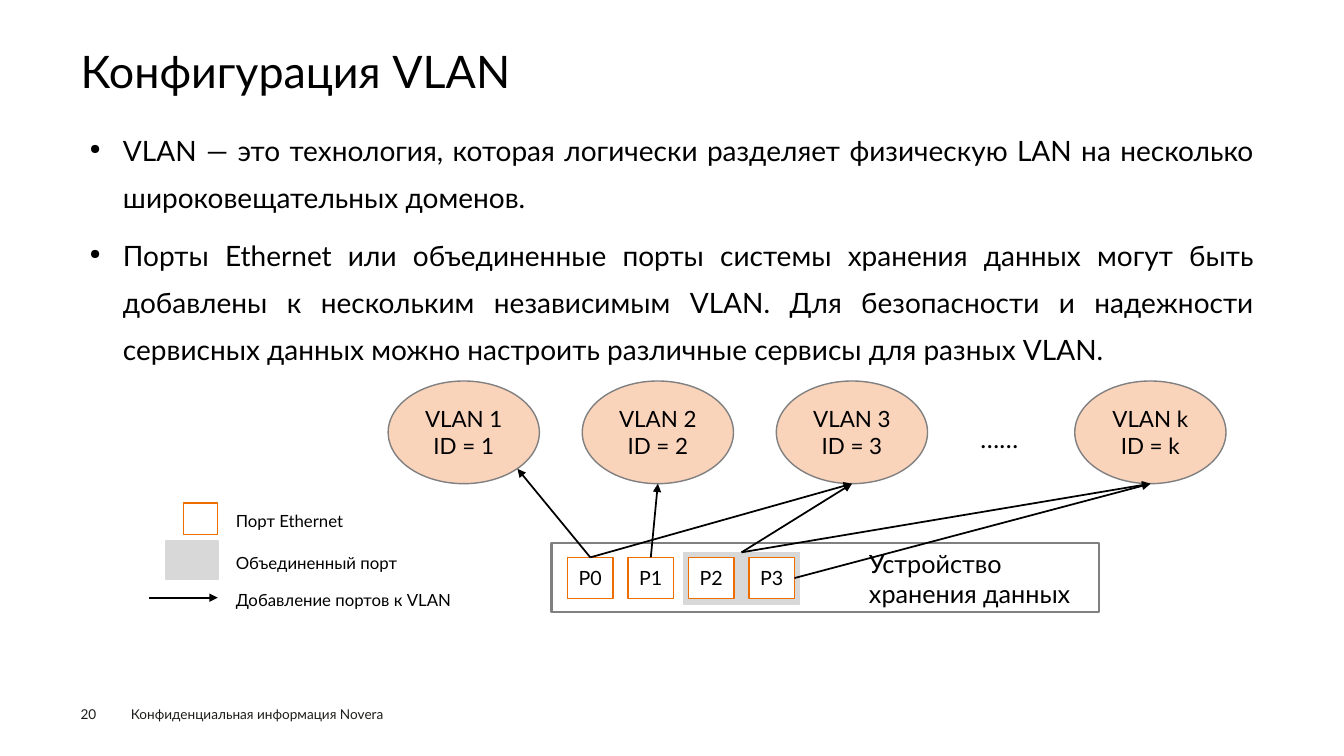
from lxml import etree
from pptx import Presentation
from pptx import util as u
from pptx.dml.color import RGBColor
from pptx.enum import shapes, text
from pptx.oxml.ns import qn

BLACK = RGBColor(0x00, 0x00, 0x00)
INK = RGBColor(0x1D, 0x1D, 0x1B)
WHITE = RGBColor(0xFF, 0xFF, 0xFF)
GREY = RGBColor(0x80, 0x80, 0x80)
SILVER = RGBColor(0xD8, 0xD8, 0xD8)
PEACH = RGBColor(0xFA, 0xD3, 0xBB)
ORANGE = RGBColor(0xED, 0x6D, 0x00)

FONT = "Lato"
WIDTH, HEIGHT = 13.33, 7.5
LEFT, CONTENT_WIDTH = 0.06 * WIDTH, 0.88 * WIDTH
RECT, OVAL = shapes.MSO_SHAPE.RECTANGLE, shapes.MSO_SHAPE.OVAL
MIDDLE, TOP = text.MSO_ANCHOR.MIDDLE, text.MSO_ANCHOR.TOP
CENTER, JUSTIFY = text.PP_ALIGN.CENTER, text.PP_ALIGN.JUSTIFY


def inches(*lengths):
    return [u.Inches(length) for length in lengths]


def add_bullet(paragraph, indent):
    properties = paragraph._p.get_or_add_pPr()
    properties.set("marL", str(u.Inches(indent)))
    properties.set("indent", str(-u.Inches(indent)))
    etree.SubElement(properties, qn("a:buSzPct"), val="50000")
    etree.SubElement(properties, qn("a:buChar"), char="●")


def write(shape, paragraphs, size=12, color=BLACK, align=None, anchor=TOP,
          inset=(0.1, 0.05), spacing=None, before=0, bullet_indent=None):
    frame = shape.text_frame
    frame.word_wrap = True
    frame.vertical_anchor = anchor
    frame.margin_left = frame.margin_right = u.Inches(inset[0])
    frame.margin_top = frame.margin_bottom = u.Inches(inset[1])
    for index, words in enumerate(paragraphs):
        paragraph = frame.add_paragraph() if index else frame.paragraphs[0]
        if bullet_indent:
            add_bullet(paragraph, bullet_indent)
        paragraph.alignment = align
        paragraph.line_spacing = spacing
        paragraph.space_before = u.Pt(before if index else 0)
        run = paragraph.add_run()
        run.text = words
        run.font.name, run.font.size = FONT, u.Pt(size)
        run.font.color.rgb = color


def add_label(slide, box, *paragraphs, **style):
    write(slide.shapes.add_textbox(*inches(*box)), paragraphs, **style)


def add_block(slide, kind, box, fill, line, line_width=1, paragraphs=(), size=14):
    block = slide.shapes.add_shape(kind, *inches(*box))
    block.shadow.inherit = False
    block.fill.solid()
    block.fill.fore_color.rgb = fill
    block.line.color.rgb = line
    block.line.width = u.Pt(line_width)
    write(block, paragraphs, size=size, align=CENTER, anchor=MIDDLE, inset=(0, 0))


def add_arrow(slide, start, end):
    arrow = slide.shapes.add_connector(
        shapes.MSO_CONNECTOR.STRAIGHT, *inches(*start, *end))
    arrow.line.color.rgb = BLACK
    arrow.line.width = u.Pt(1.25)
    etree.SubElement(arrow.line._get_or_add_ln(), qn("a:tailEnd"), type="triangle")
    etree.SubElement(arrow._element.spPr, qn("a:effectLst"))


def add_heading(slide, box, words):
    title = slide.shapes.title
    title.left, title.top, title.width, title.height = inches(*box)
    write(title, [words], size=32, align=text.PP_ALIGN.LEFT, inset=(0, 0), spacing=0.9)


def add_vlans(slide, box):
    """Draw the row of VLANs and return their centres and radii."""
    left, top, width, height = box
    oval_width, pitch = 1.5, 1.925
    lefts = {name: left + column * pitch for column, name in enumerate("123")}
    lefts["k"] = left + width - oval_width
    for name, x in lefts.items():
        add_block(slide, OVAL, (x, top, oval_width, height), PEACH, GREY,
                  paragraphs=[f"VLAN {name}", f"ID = {name}"], size=16)
    add_label(slide, (left + 3 * pitch, top + 0.37, 0.7, 0.34), "……", size=18)
    return {name: (x + oval_width / 2, top + height / 2, oval_width / 2, height / 2)
            for name, x in lefts.items()}


def add_device(slide, box):
    """Draw the storage device and return the points where arrows leave it."""
    left, top, width, height = box
    port_width, port_height, pitch, edge = 0.45, 0.41, 0.6, 0.05
    first_port, port_top = left + 0.16, top + 0.14
    add_block(slide, RECT, box, WHITE, GREY, 1.5)

    # Bonded port behind P2 and P3
    pool_left, pool_top = first_port + 2 * pitch - edge, port_top - edge
    pool_width = pitch + port_width + 2 * edge
    add_block(slide, RECT, (pool_left, pool_top, pool_width, port_height + 2 * edge),
              SILVER, SILVER, 1.25)
    port_lefts = [first_port + column * pitch for column in range(4)]
    for number, x in enumerate(port_lefts):
        add_block(slide, RECT, (x, port_top, port_width, port_height),
                  WHITE, ORANGE, paragraphs=[f"P{number}"])
    add_label(slide, (left + 3.05, top, width - 3.05, height),
              "Устройство", "хранения данных", size=18)
    return {
        "P0": (port_lefts[0] + port_width / 2, port_top),
        "P1": (port_lefts[1] + port_width / 2, port_top),
        "pool": (pool_left + pool_width / 2, pool_top),
        "P3": (port_lefts[3] + port_width, port_top + port_height / 2),
    }


def add_diagram(slide, box):
    left, top, width, height = box
    vlans = add_vlans(slide, (left, top, width, 0.445 * height))
    ports = add_device(slide, (left + 1.62, top + 0.703 * height, 5.43, 0.297 * height))
    for port, name in [("P0", "1"), ("P0", "3"), ("P1", "2"),
                       ("pool", "3"), ("pool", "k"), ("P3", "k")]:
        x, y, radius_x, radius_y = vlans[name]
        if name == "1":  # the arrow meets the lower right of the oval
            end = (x + 0.71 * radius_x, y + 0.71 * radius_y)
        else:
            end = (x, y + radius_y)
        add_arrow(slide, ports[port], end)


def add_legend(slide, box):
    left, top, width, height = box
    key_width = 0.68
    right = left + key_width
    add_block(slide, RECT, (right - 0.34, top, 0.34, 0.31), WHITE, ORANGE)
    add_block(slide, RECT, (right - 0.51, top + 0.38, 0.51, 0.38), SILVER, SILVER, 1.25)
    add_arrow(slide, (left, top + 0.94), (right, top + 0.94))
    labels = ["Порт Ethernet", "Объединенный порт", "Добавление портов к VLAN"]
    for label, offset in zip(labels, (0.03, 0.44, 0.81)):
        add_label(slide, (right + 0.08, top + offset, width - key_width, 0.26), label)


def add_footer(slide, box):
    left, top, width, height = box
    add_label(slide, (left, top + 0.05, 0.4, 0.16), "20",
              size=9.7, color=INK, inset=(0, 0))
    add_label(slide, (left + 0.4, top, width - 0.4, height),
              "Конфиденциальная информация Novera", size=9.7, color=INK)


def main():
    deck = Presentation()
    deck.slide_width, deck.slide_height = inches(WIDTH, HEIGHT)
    slide = deck.slides.add_slide(deck.slide_layouts[5])
    add_heading(slide, (LEFT, 0.49, CONTENT_WIDTH, 0.54), "Конфигурация VLAN")
    add_label(
        slide, (LEFT, 1.15, CONTENT_WIDTH, 2.6),
        "VLAN — это технология, которая логически разделяет физическую LAN "
        "на несколько широковещательных доменов.",
        "Порты Ethernet или объединенные порты системы хранения данных могут быть "
        "добавлены к нескольким независимым VLAN. Для безопасности и надежности "
        "сервисных данных можно настроить различные сервисы для разных VLAN.",
        size=20, align=JUSTIFY, inset=(0.09, 0.04), spacing=1.4, before=7.9,
        bullet_indent=0.33)
    add_diagram(slide, (3.85, 3.78, 8.31, 2.29))
    add_legend(slide, (1.48, 4.99, 3.2, 1.07))
    add_footer(slide, (LEFT, 6.95, 4, 0.26))
    deck.save("out.pptx")


if __name__ == "__main__":
    main()
